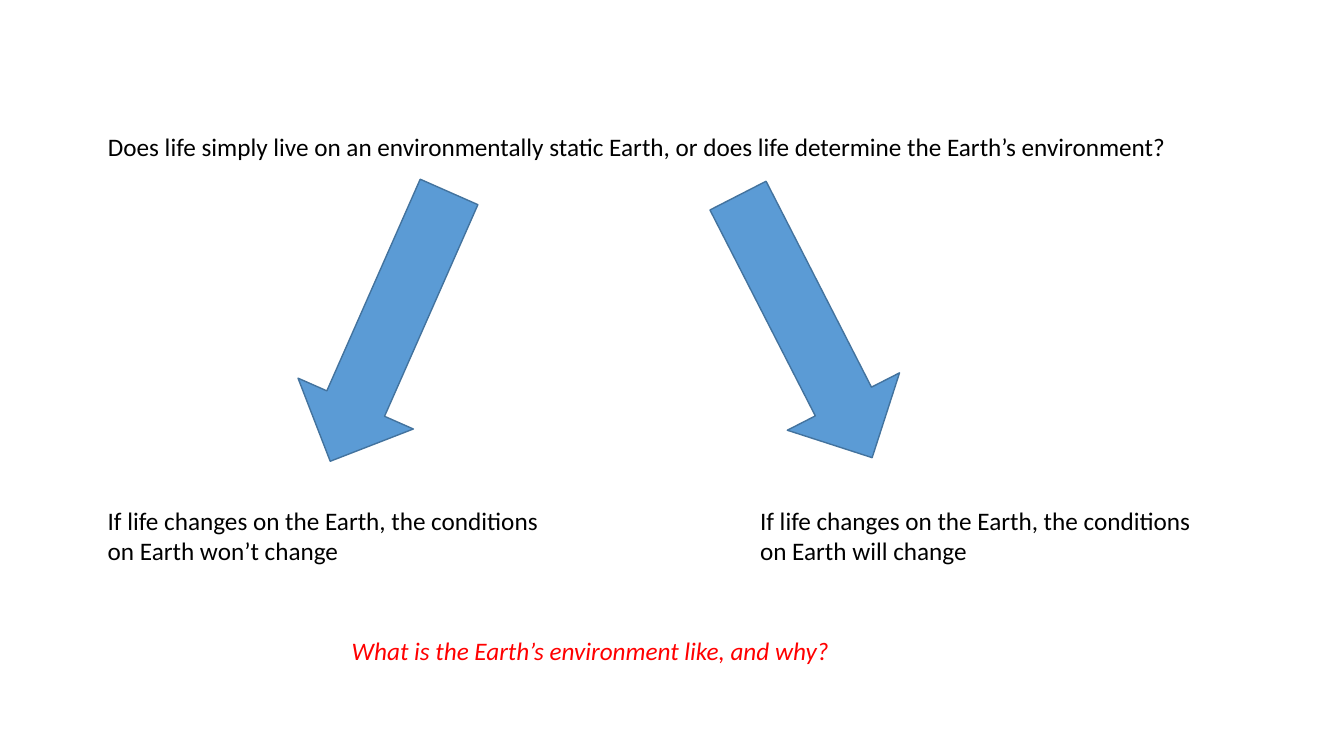
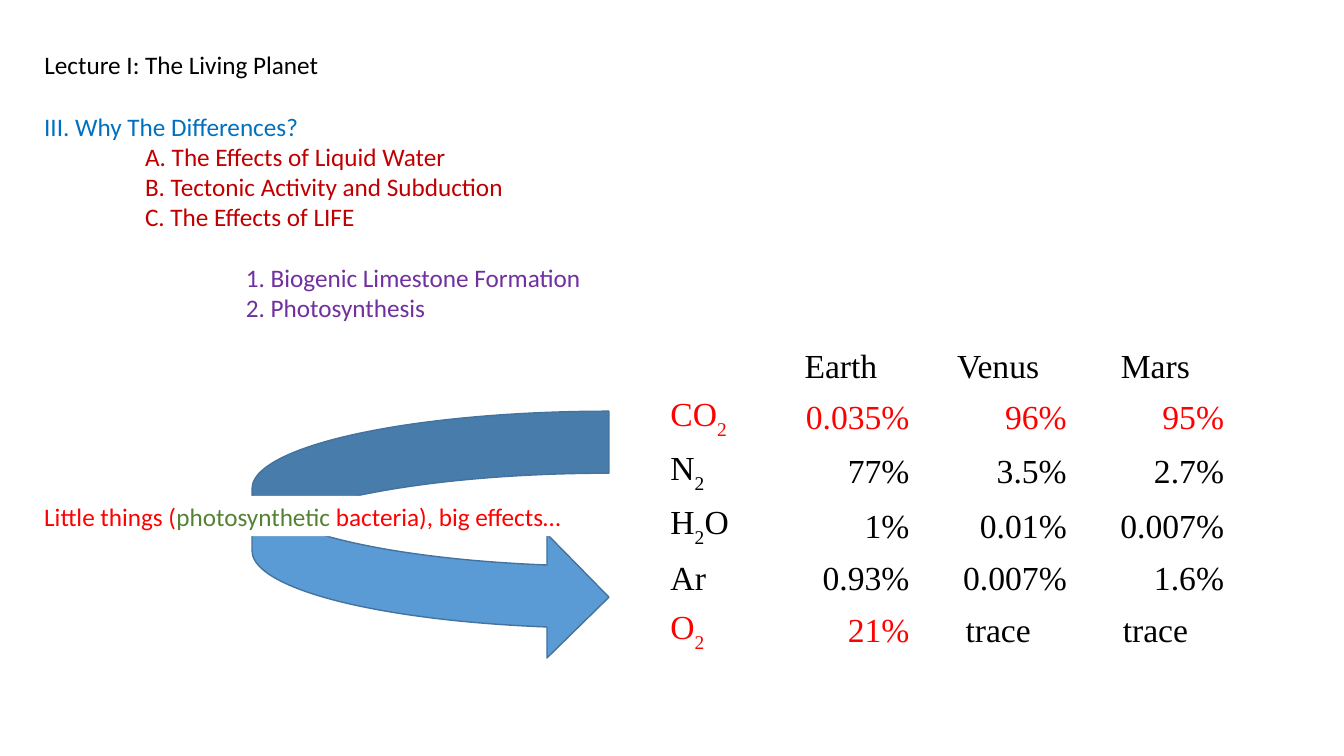
from pptx import Presentation
from pptx.dml.color import RGBColor
from pptx.enum.shapes import MSO_SHAPE as Shape
from pptx.enum.text import MSO_ANCHOR as Anchor, MSO_AUTO_SIZE as AutoSize, PP_ALIGN as Align
from pptx.util import Inches, Pt

# Shared style
BODY_FONT, TABLE_FONT = "Calibri", "Times New Roman"
BODY_SIZE, TABLE_SIZE = 18, 24
LINE_HEIGHT = 22
BLACK, WHITE, RED = "000000", "FFFFFF", "FF0000"
BLUE, DARK_RED, PURPLE, GREEN = "0070C0", "C00000", "7030A0", "548235"
ARROW_FILL, ARROW_LINE = "5B9BD5", "43739E"
TITLE_ONLY = 5


def rgb(color):
    return RGBColor.from_string(color)


def inches(box):
    return [Inches(length) for length in box]


def style_font(font, color, name=BODY_FONT, size=BODY_SIZE):
    font.name, font.size = name, Pt(size)
    font.color.rgb = rgb(color)


def prepare_frame(frame):
    frame.word_wrap = True
    frame.auto_size = AutoSize.NONE
    frame.vertical_anchor = Anchor.TOP
    return frame


def add_titled_slide(presentation, text, box):
    slide = presentation.slides.add_slide(presentation.slide_layouts[TITLE_ONLY])
    title = slide.shapes.title
    title.left, title.top, title.width, title.height = inches(box)
    paragraph = prepare_frame(title.text_frame).paragraphs[0]
    paragraph.text = text
    paragraph.alignment = Align.LEFT
    style_font(paragraph.font, BLACK)
    return slide


def add_text(slide, box, text, color=BLACK, italic=False):
    shape = slide.shapes.add_textbox(*inches(box))
    paragraph = prepare_frame(shape.text_frame).paragraphs[0]
    paragraph.text = text
    style_font(paragraph.font, color)
    paragraph.font.italic = italic


def add_arrow(slide, kind, box, rotation=0):
    arrow = slide.shapes.add_shape(kind, *inches(box))
    arrow.rotation = rotation
    arrow.shadow.inherit = False
    arrow.fill.solid()
    arrow.fill.fore_color.rgb = rgb(ARROW_FILL)
    arrow.line.color.rgb = rgb(ARROW_LINE)
    arrow.line.width = Pt(1)


def add_outline(slide, box, items):
    """Each item is level, text, colour and the blank lines above it."""
    frame = prepare_frame(slide.shapes.add_textbox(*inches(box)).text_frame)
    for index, (level, text, color, lines_above) in enumerate(items):
        paragraph = frame.add_paragraph() if index else frame.paragraphs[0]
        paragraph.text = text
        paragraph.space_before = Pt(lines_above * LINE_HEIGHT)
        style_font(paragraph.font, color)
        # Left indent of one inch per level
        paragraph._p.get_or_add_pPr().set("marL", str(Inches(level)))


def add_formula(paragraph, formula):
    """Write a chemical formula with its digits as subscripts."""
    for symbol in formula:
        run = paragraph.add_run()
        run.text = symbol
        if symbol.isdigit():
            run._r.get_or_add_rPr().set("baseline", "-30000")


def add_gas_table(slide, box, first_width, planets, gases):
    rows, columns = len(gases) + 1, len(planets) + 1
    table = slide.shapes.add_table(rows, columns, *inches(box)).table
    table.first_row = table.horz_banding = False
    for index, column in enumerate(table.columns):
        width = (box[2] - first_width) / len(planets) if index else first_width
        column.width = Inches(width)
    for index, row in enumerate(table.rows):
        row.height = Inches(0.5 if index else 0.58)

    for row, values in enumerate([("", *planets), *gases]):
        for column, value in enumerate(values):
            cell = table.cell(row, column)
            cell.fill.background()
            cell.vertical_anchor = Anchor.MIDDLE if row else Anchor.BOTTOM
            paragraph = cell.text_frame.paragraphs[0]
            if column == 0:
                add_formula(paragraph, value)
                paragraph.alignment = Align.LEFT
            else:
                paragraph.text = value
                paragraph.alignment = Align.RIGHT if value.endswith("%") else Align.CENTER
            highlighted = values[0] in ("CO2", "O2") and value != "trace"
            style_font(paragraph.font, RED if highlighted else BLACK, TABLE_FONT, TABLE_SIZE)


def add_label(slide, box, parts):
    label = slide.shapes.add_shape(Shape.RECTANGLE, *inches(box))
    label.shadow.inherit = False
    label.fill.solid()
    label.fill.fore_color.rgb = rgb(WHITE)
    label.line.fill.background()
    paragraph = prepare_frame(label.text_frame).paragraphs[0]
    paragraph.alignment = Align.LEFT
    for text, color in parts:
        run = paragraph.add_run()
        run.text = text
        style_font(run.font, color)


def build_question_slide(presentation):
    left, right = 0.97, 7.44
    slide = add_titled_slide(
        presentation,
        "Does life simply live on an environmentally static Earth, "
        "or does life determine the Earth’s environment?",
        (left, 1.25, 11.05, 0.4))
    # Two possible answers
    for arrow_left, rotation, text_left, verb in (
            (3.24, 23.8, left, "won’t"), (7.36, 332.9, right, "will")):
        add_arrow(slide, Shape.DOWN_ARROW, (arrow_left, 1.78, 1.25, 2.92), rotation)
        add_text(slide, (text_left, 4.96, 4.47, 0.71),
                 f"If life changes on the Earth, the conditions on Earth {verb} change")
    add_text(slide, (3.39, 6.25, 6.06, 0.71),
             "What is the Earth’s environment like, and why?", RED, italic=True)


def build_differences_slide(presentation):
    left = 0.34
    slide = add_titled_slide(presentation, "Lecture I: The Living Planet", (left, 0.44, 8.57, 0.4))
    add_outline(slide, (left, 1.05, 8.57, 2.22), [
        (0, "III. Why The Differences?", BLUE, 0),
        (1, "A. The Effects of Liquid Water", DARK_RED, 0),
        (1, "B. Tectonic Activity and Subduction", DARK_RED, 0),
        (1, "C. The Effects of LIFE", DARK_RED, 0),
        (2, "1. Biogenic Limestone Formation", PURPLE, 1),
        (2, "2. Photosynthesis", PURPLE, 0),
    ])
    # Atmospheres compared
    add_gas_table(slide, (6.55, 3.3, 5.69, 3.08), 1.01, ("Earth", "Venus", "Mars"), [
        ("CO2", "0.035%", "96%", "95%"),
        ("N2", "77%", "3.5%", "2.7%"),
        ("H2O", "1%", "0.01%", "0.007%"),
        ("Ar", "0.93%", "0.007%", "1.6%"),
        ("O2", "21%", "trace", "trace"),
    ])
    # Arrow with the label across it
    add_arrow(slide, Shape.CURVED_RIGHT_ARROW, (2.5, 4.08, 3.54, 2.46))
    add_label(slide, (left, 4.92, 5.7, 0.4), [
        ("Little things (", RED), ("photosynthetic", GREEN), (" bacteria), big effects…", RED)])


def main():
    presentation = Presentation()
    presentation.slide_width, presentation.slide_height = inches((13.33, 7.5))
    build_question_slide(presentation)
    build_differences_slide(presentation)
    presentation.save("out.pptx")


if __name__ == "__main__":
    main()
